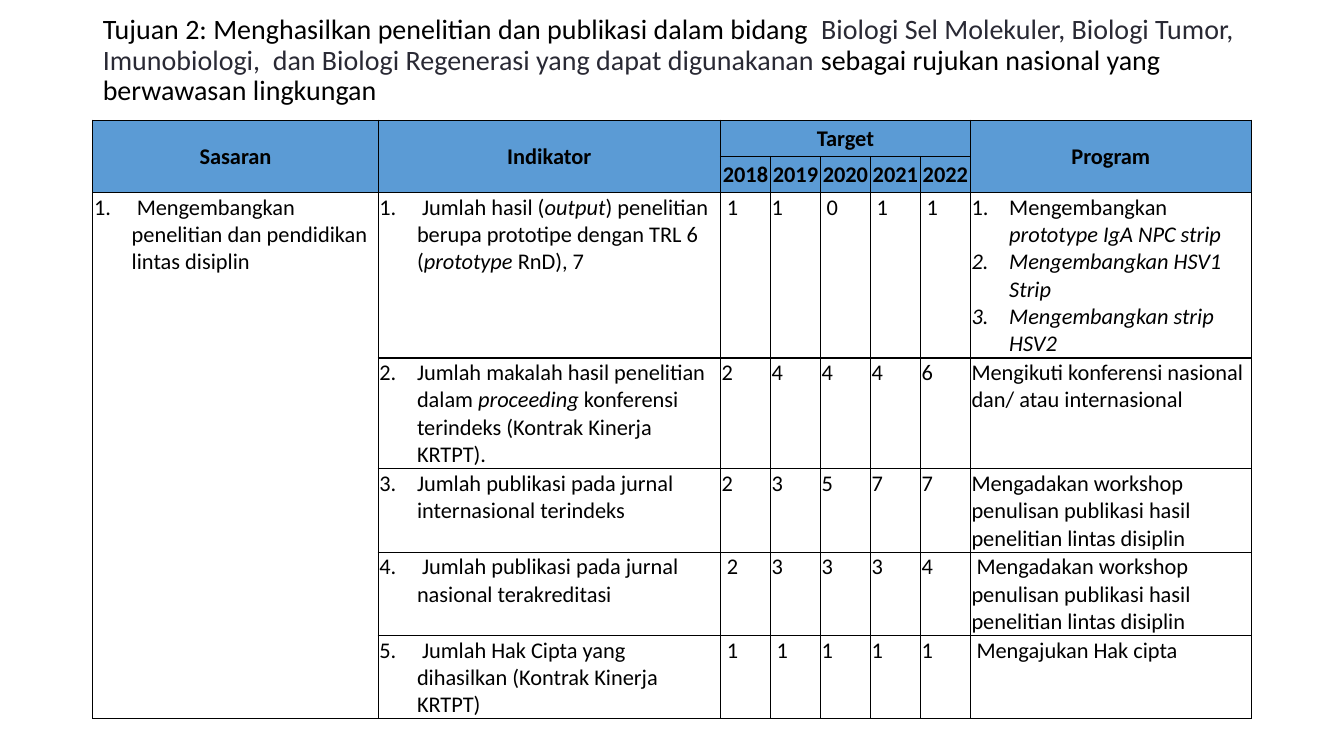
from pptx import Presentation
from pptx.dml.color import RGBColor as Rgb
from pptx.enum.text import MSO_ANCHOR as Anchor, MSO_AUTO_SIZE as Fit, PP_ALIGN as Align
from pptx.oxml.ns import qn
from pptx.util import Cm, Pt
from lxml.etree import SubElement as Sub

LEFT, WIDE = 2.34, 29.2
BLUE, BLACK, SLATE = "5B9BD5", "000000", "292934"
YEAR = 1.26
COLS = [7.19, 8.63] + [YEAR] * 5 + [7.08]
HEAD, LINE, PAD = 0.91, 0.69, 0.03
YEARS = ["2018", "2019", "2020", "2021", "2022"]
GOAL = " Mengembangkan penelitian dan pendidikan lintas disiplin"
SHOP = "Mengadakan workshop penulisan publikasi hasil penelitian lintas disiplin"
ROWS = [
    (6, " Jumlah hasil (*output*) penelitian berupa prototipe dengan TRL 6 (*prototype *RnD), 7",
     [" 1", "1", " 0", " 1", " 1"],
     ["Mengembangkan *prototype IgA NPC strip*",
      "*Mengembangkan HSV1 Strip*", "*Mengembangkan strip HSV2*"]),
    (4, "Jumlah makalah hasil penelitian dalam *proceeding *konferensi terindeks (Kontrak Kinerja KRTPT).",
     ["2", "4", "4", "4", "6"], "Mengikuti konferensi nasional dan/ atau internasional"),
    (3, "Jumlah publikasi pada jurnal internasional terindeks",
     ["2", "3", "5", "7", "7"], SHOP),
    (3, " Jumlah publikasi pada jurnal nasional terakreditasi",
     [" 2", "3", "3", "3", "4"], " " + SHOP),
    (3, " Jumlah Hak Cipta yang dihasilkan (Kontrak Kinerja KRTPT)",
     [" 1", " 1", "1", "1", "1"], " Mengajukan Hak cipta"),
]


def tint(code):
    return Rgb.from_string(code)


def write(para, text, size=16, color=BLACK, bold=False, align=Align.LEFT):
    para.alignment = align
    for i, part in enumerate(text.split("*")):
        if part:
            run = para.add_run()
            run.text = part
            font = run.font
            font.name, font.size = "Calibri", Pt(size)
            font.bold, font.italic = bold, i % 2 == 1
            font.color.rgb = tint(color)


def number(para, start):
    props = para._p.get_or_add_pPr()
    props.set("marL", str(Cm(0.95)))
    props.set("indent", str(-Cm(0.95)))
    Sub(props, qn("a:buFont"), typeface="+mj-lt")
    Sub(props, qn("a:buAutoNum"), type="arabicPeriod", startAt=str(start))


def border(cell):
    props = cell._tc.get_or_add_tcPr()
    for side in ("a:lnL", "a:lnR", "a:lnT", "a:lnB"):
        line = Sub(props, qn(side), w=str(Pt(1)))
        fill = Sub(line, qn("a:solidFill"))
        Sub(fill, qn("a:srgbClr"), val=BLACK)


def style(cell, head):
    border(cell)
    cell.margin_left = cell.margin_right = cell.margin_top = Cm(0.03)
    cell.margin_bottom = 0
    if head:
        cell.fill.solid()
        cell.fill.fore_color.rgb = tint(BLUE)
        cell.vertical_anchor = Anchor.MIDDLE
    else:
        cell.fill.background()
        cell.vertical_anchor = Anchor.TOP


def items(cell, texts, start=1):
    frame = cell.text_frame
    for i, text in enumerate(texts):
        para = frame.add_paragraph() if i else frame.paragraphs[0]
        number(para, start)
        write(para, text)


def title(slide, left, top, wide, high):
    box = slide.shapes.title
    box.left, box.top, box.width, box.height = map(Cm, (left, top, wide, high))
    frame = box.text_frame
    frame.word_wrap, frame.auto_size = True, Fit.NONE
    frame.vertical_anchor = Anchor.MIDDLE
    frame.margin_left = frame.margin_right = Cm(0.25)
    frame.margin_top, frame.margin_bottom = Cm(0.13), Cm(0.9)
    para = frame.paragraphs[0]
    para.line_spacing = 0.9
    for text, color in (
        ("Tujuan 2: Menghasilkan penelitian dan publikasi dalam bidang  ", BLACK),
        ("Biologi Sel Molekuler, Biologi Tumor, Imunobiologi,  dan Biologi Regenerasi "
         "yang dapat digunakanan ", SLATE),
        ("sebagai rujukan nasional yang berwawasan lingkungan", BLACK),
    ):
        write(para, text, size=20, color=color)


def header(grid):
    for col in (0, 1, 7):
        grid.cell(0, col).merge(grid.cell(1, col))
    grid.cell(0, 2).merge(grid.cell(0, 6))
    names = {(0, 0): "Sasaran", (0, 1): "Indikator", (0, 2): "Target", (0, 7): "Program"}
    names.update({(1, 2 + i): year for i, year in enumerate(YEARS)})
    for (row, col), name in names.items():
        write(grid.cell(row, col).text_frame.paragraphs[0], name,
              bold=True, align=Align.CENTER)


def body(grid):
    grid.cell(2, 0).merge(grid.cell(6, 0))
    items(grid.cell(2, 0), [GOAL])
    for i, (_, aim, marks, plan) in enumerate(ROWS):
        row = i + 2
        items(grid.cell(row, 1), [aim], i + 1)
        for col, mark in enumerate(marks, 2):
            write(grid.cell(row, col).text_frame.paragraphs[0], mark)
        if isinstance(plan, list):
            items(grid.cell(row, 7), plan)
        else:
            write(grid.cell(row, 7).text_frame.paragraphs[0], plan)


def table(slide, left, top, wide):
    highs = [HEAD] * 2 + [row[0] * LINE + PAD for row in ROWS]
    grid = slide.shapes.add_table(len(highs), len(COLS), Cm(left), Cm(top),
                                  Cm(wide), Cm(sum(highs))).table
    grid.first_row = grid.horz_banding = False
    for col, size in zip(grid.columns, COLS):
        col.width = Cm(size * wide / sum(COLS))
    for i, (row, size) in enumerate(zip(grid.rows, highs)):
        row.height = Cm(size)
        for cell in row.cells:
            style(cell, i < 2)
    header(grid)
    body(grid)


def main():
    deck = Presentation()
    deck.slide_width, deck.slide_height = Cm(33.87), Cm(19.05)
    slide = deck.slides.add_slide(deck.slide_layouts[5])
    title(slide, LEFT, 1.02, WIDE, 1.8)
    table(slide, LEFT, 3.03, WIDE)
    deck.save("out.pptx")


if __name__ == "__main__":
    main()
